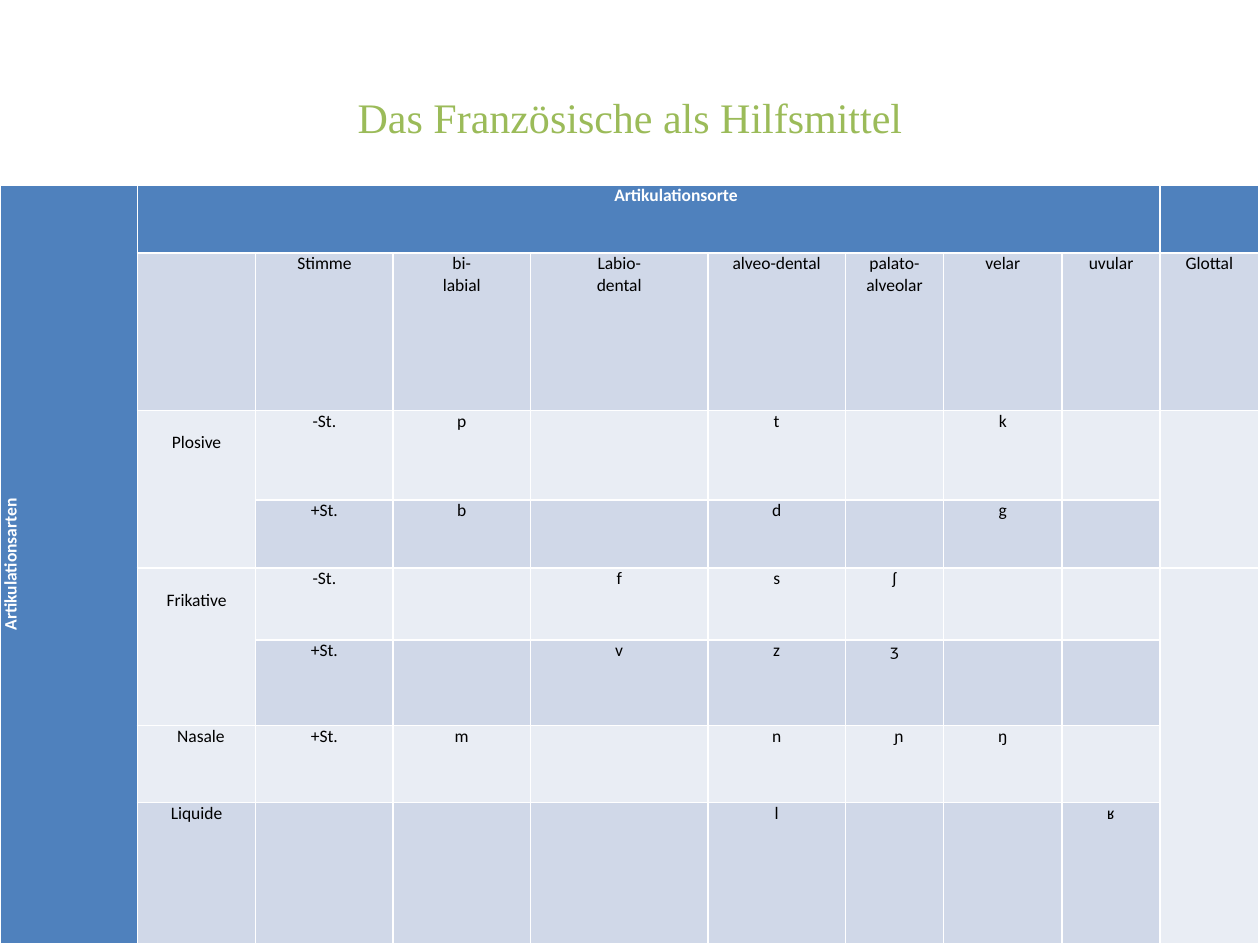
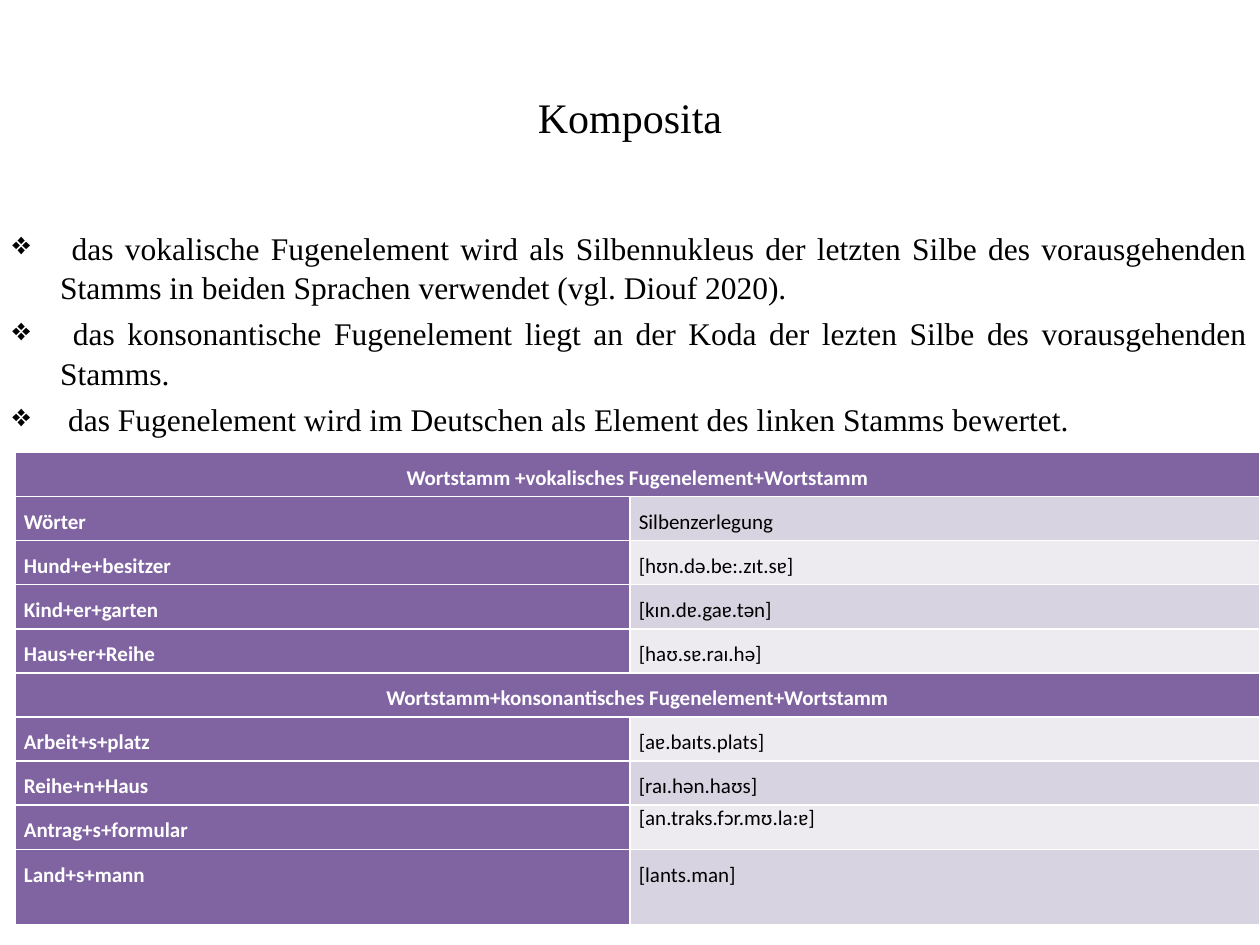
from dataclasses import dataclass

from lxml.etree import SubElement
from pptx import Presentation
from pptx.dml.color import RGBColor
from pptx.enum.text import MSO_ANCHOR, PP_ALIGN
from pptx.oxml.ns import qn
from pptx.util import Inches, Pt


@dataclass(frozen=True)
class Theme:
    """Colours, fonts and type sizes shared by the slides."""

    title_font: str = "Times New Roman"
    table_font: str = "Calibri"
    title_size: int = 24
    bullet_size: int = 18
    black: str = "000000"
    white: str = "FFFFFF"
    green: str = "9BBB59"


@dataclass(frozen=True)
class TableLook:
    """Accent and band colours and type size of one table."""

    accent: str
    odd_band: str
    even_band: str
    size: int
    line_spacing: float
    align: PP_ALIGN


THEME = Theme()
SOUND_LOOK = TableLook("4F81BD", "D0D8E8", "E9EDF4", 10, 1.0, PP_ALIGN.CENTER)
COMPOUND_LOOK = TableLook("8064A2", "D8D3E0", "EDEAF0", 12, 1.5, PP_ALIGN.JUSTIFY)

SOUND_COLUMNS = [1.09, 0.94, 1.09, 1.09, 1.41, 1.09, 0.78, 0.94, 0.78, 0.78]
SOUND_HEIGHTS = [0.54, 1.25, 0.71, 0.54, 0.57, 0.68, 0.61, 1.12]
SOUND_MERGES = [(0, 0, 7, 0), (0, 1, 0, 8), (2, 1, 3, 1), (4, 1, 5, 1), (2, 9, 3, 9), (4, 9, 7, 9)]
SOUND_ROWS = [
    ["Artikulationsarten", "Artikulationsorte"],
    ["", "", "Stimme", "bi-\nlabial", "Labio-\ndental", "alveo-dental",
     "palato-alveolar", "velar", "uvular", "Glottal"],
    ["", "Plosive", "-St.", "p", "", "t", "", "k"],
    ["", "", "+St.", "b", "", "d", "", "g"],
    ["", "Frikative", "-St.", "", "f", "s", "ʃ"],
    ["", "", "+St.", "", "v", "z", "ʒ"],
    ["", "Nasale", "+St.", "m", "", "n", "ɲ", "ŋ"],
    ["", "Liquide", "", "", "", "l", "", "", "ʁ"],
]
COMPOUND_BANNERS = (0, 5)
COMPOUND_ROWS = [
    ["Wortstamm +vokalisches Fugenelement+Wortstamm"],
    ["Wörter", "Silbenzerlegung"],
    ["Hund+e+besitzer", "[hʊn.dә.be:.zɪt.sɐ]"],
    ["Kind+er+garten", "[kɪn.dɐ.gaɐ.tәn]"],
    ["Haus+er+Reihe", "[haʊ.sɐ.raɪ.hә]"],
    ["Wortstamm+konsonantisches Fugenelement+Wortstamm"],
    ["Arbeit+s+platz", "[aɐ.baɪts.plats]"],
    ["Reihe+n+Haus", "[raɪ.hәn.haʊs]"],
    ["Antrag+s+formular", "[an.traks.fᴐr.mʊ.la:ɐ]"],
    ["Land+s+mann", "[lants.man]"],
]
BULLETS = [
    " das vokalische Fugenelement wird als Silbennukleus der letzten Silbe des "
    "vorausgehenden Stamms in beiden Sprachen verwendet (vgl. Diouf 2020).",
    " das konsonantische Fugenelement liegt an der Koda der lezten Silbe des "
    "vorausgehenden Stamms.",
    " das Fugenelement wird im Deutschen als Element des linken Stamms bewertet.",
]


def format_runs(paragraph, font_name, size, color, bold=False):
    """Set the font of every run in a paragraph."""
    for run in paragraph.runs:
        run.font.name = font_name
        run.font.size = Pt(size)
        run.font.bold = bold
        run.font.color.rgb = RGBColor.from_string(color)


def add_titled_slide(presentation, title, color):
    """Add a title-only slide with the shared title style."""
    slide = presentation.slides.add_slide(presentation.slide_layouts[5])
    shape = slide.shapes.title
    shape.left, shape.top = Inches(0.5), Inches(0.3)
    shape.width, shape.height = Inches(9), Inches(1.25)
    shape.text_frame.text = title
    shape.text_frame.vertical_anchor = MSO_ANCHOR.MIDDLE
    paragraph = shape.text_frame.paragraphs[0]
    paragraph.alignment = PP_ALIGN.CENTER
    format_runs(paragraph, THEME.title_font, THEME.title_size, color)
    return slide


def indent_cell(cell, inches):
    """Indent the first paragraph of a cell from the left."""
    properties = cell.text_frame.paragraphs[0]._p.get_or_add_pPr()
    properties.set("marL", str(Inches(inches)))


def fill_cell(cell, text, look, is_accent, band):
    """Fill a cell and write its text in the look of the table."""
    cell.margin_left = cell.margin_right = Inches(0.07)
    cell.margin_top = cell.margin_bottom = 0
    cell.fill.solid()
    cell.fill.fore_color.rgb = RGBColor.from_string(look.accent if is_accent else band)
    cell.text_frame.text = text
    for paragraph in cell.text_frame.paragraphs:
        paragraph.alignment = look.align
        paragraph.line_spacing = look.line_spacing
        paragraph.font.size = Pt(look.size)
        color = THEME.white if is_accent else THEME.black
        format_runs(paragraph, THEME.table_font, look.size, color, is_accent)


def add_banded_table(slide, left, top, columns, heights, rows, look, banners=(0,)):
    """Add a table with accented banners and first column and banded rows."""
    frame = slide.shapes.add_table(len(heights), len(columns), Inches(left), Inches(top),
                                   Inches(sum(columns)), Inches(sum(heights)))
    table = frame.table
    for column, width in zip(table.columns, columns):
        column.width = Inches(width)
    for row_index, (height, texts) in enumerate(zip(heights, rows)):
        table.rows[row_index].height = Inches(height)
        band = look.odd_band if row_index % 2 else look.even_band
        for column_index in range(len(columns)):
            text = texts[column_index] if column_index < len(texts) else ""
            is_accent = column_index == 0 or row_index in banners
            fill_cell(table.cell(row_index, column_index), text, look, is_accent, band)
    return table


def add_bullets(slide, texts):
    """Add the justified list with diamond bullets."""
    box = slide.shapes.add_textbox(0, Inches(1.75), Inches(10), Inches(1.8))
    text_frame = box.text_frame
    text_frame.word_wrap = True
    text_frame.text = "\n".join(texts)
    for paragraph in text_frame.paragraphs:
        paragraph.alignment = PP_ALIGN.JUSTIFY
        paragraph.space_before = Pt(THEME.bullet_size * 0.2)
        paragraph.line_spacing = 1.05
        properties = paragraph._p.get_or_add_pPr()
        properties.set("marL", str(Inches(0.38)))
        properties.set("indent", str(-Inches(0.38)))
        SubElement(properties, qn("a:buChar")).set("char", "❖")
        format_runs(paragraph, THEME.title_font, THEME.bullet_size, THEME.black)


def build_sound_slide(presentation):
    """Build the slide with the consonant table."""
    slide = add_titled_slide(presentation, "Das Französische als Hilfsmittel", THEME.green)
    table = add_banded_table(slide, 0, 1.47, SOUND_COLUMNS, SOUND_HEIGHTS, SOUND_ROWS, SOUND_LOOK)
    for top, left, bottom, right in SOUND_MERGES:
        table.cell(top, left).merge(table.cell(bottom, right))
    table.cell(0, 0)._tc.get_or_add_tcPr().set("vert", "vert270")
    for row_index in (2, 4):
        table.cell(row_index, 1).margin_top = Inches(0.17)
    for row_index, column_index, inches in [(0, 1, 0.43), (6, 1, 0.07), (6, 6, 0.07)]:
        indent_cell(table.cell(row_index, column_index), inches)


def build_compound_slide(presentation):
    """Build the slide with the rules and examples for compounds."""
    slide = add_titled_slide(presentation, "Komposita", THEME.black)
    add_bullets(slide, BULLETS)
    heights = [0.35] * (len(COMPOUND_ROWS) - 1) + [0.6]
    table = add_banded_table(slide, 0.12, 3.59, [4.88, 5], heights, COMPOUND_ROWS,
                             COMPOUND_LOOK, COMPOUND_BANNERS)
    for row_index in COMPOUND_BANNERS:
        banner = table.cell(row_index, 0)
        banner.merge(table.cell(row_index, 1))
        banner.text_frame.paragraphs[0].alignment = PP_ALIGN.CENTER
    table.cell(8, 1).text_frame.paragraphs[0].line_spacing = 1.0


def main():
    """Build and save the presentation."""
    presentation = Presentation()
    presentation.slide_width, presentation.slide_height = Inches(10), Inches(7.5)
    build_sound_slide(presentation)
    build_compound_slide(presentation)
    presentation.save("out.pptx")


if __name__ == "__main__":
    main()
